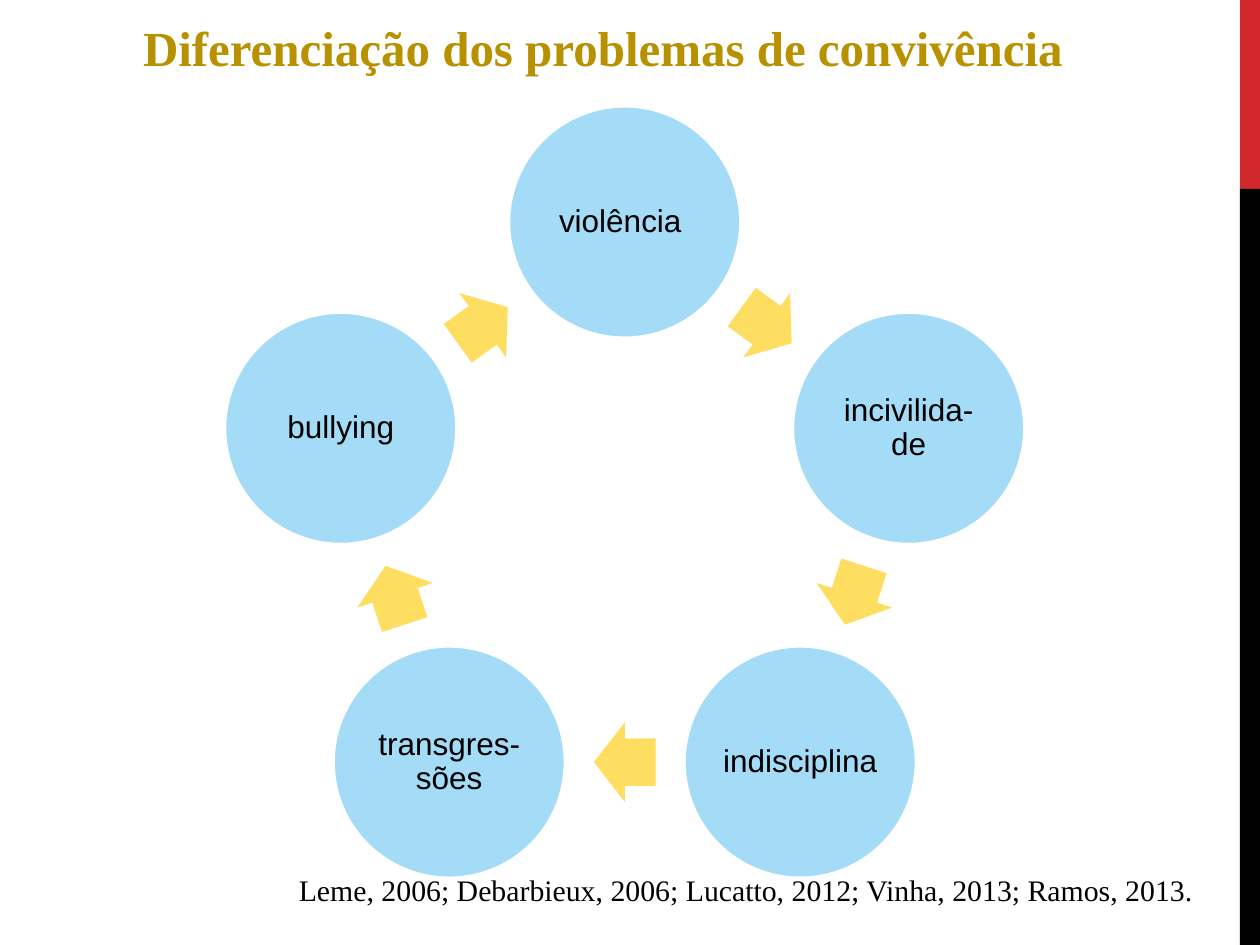
from math import cos, radians, sin

from pptx import Presentation
from pptx.dml.color import RGBColor
from pptx.enum.shapes import MSO_SHAPE
from pptx.enum.text import MSO_ANCHOR, PP_ALIGN
from pptx.util import Pt


def add_filled(kind, left, top, width, height, color):
    sp = s.shapes.add_shape(kind, Pt(left), Pt(top), Pt(width), Pt(height))
    sp.shadow.inherit = False
    sp.fill.solid()
    sp.fill.fore_color.rgb = RGBColor.from_string(color)
    sp.line.fill.background()
    return sp


def set_text(sp, text, font, size, color, align, bold=False):
    tf = sp.text_frame
    tf.word_wrap = True
    tf.vertical_anchor = MSO_ANCHOR.MIDDLE
    p = tf.paragraphs[0]
    p.text = text
    p.alignment = align
    p.line_spacing = 0.9
    p.font.name = font
    p.font.size = Pt(size)
    p.font.bold = bold
    p.font.color.rgb = RGBColor.from_string(color)
    return tf


prs = Presentation()
prs.slide_width, prs.slide_height = Pt(720), Pt(540)
s = prs.slides.add_slide(prs.slide_layouts[5])

add_filled(MSO_SHAPE.RECTANGLE, 708.5, 0, 11.5, 108, "D1282E")
add_filled(MSO_SHAPE.RECTANGLE, 708.5, 108, 11.5, 432, "000000")

title = s.shapes.title
title.left, title.top, title.width, title.height = Pt(0), Pt(9), Pt(689), Pt(40)
set_text(title, "Diferenciação dos problemas de convivência",
         "Times New Roman", 28, "B89101", PP_ALIGN.CENTER, bold=True)

labels = ["violência ", "incivilida-de", "indisciplina", "transgres-sões", "bullying"]
center_x, center_y = 357, 297.5
ring_radius, arrow_radius = 170.6, 138
diameter, arrow_w, arrow_h = 133, 35.3, 45.4
step = 360 / len(labels)

for i, label in enumerate(labels):
    angle = radians(i * step)
    x = center_x + ring_radius * sin(angle)
    y = center_y - ring_radius * cos(angle)
    circle = add_filled(MSO_SHAPE.OVAL, x - diameter / 2, y - diameter / 2,
                        diameter, diameter, "A4DBF6")
    circle.line.color.rgb = RGBColor.from_string("FFFFFF")
    circle.line.width = Pt(2.25)
    tf = set_text(circle, label, "Arial", 18, "000000", PP_ALIGN.CENTER)
    tf.margin_left = tf.margin_right = tf.margin_top = tf.margin_bottom = Pt(2)

    turn = (i + 0.5) * step
    x = center_x + arrow_radius * sin(radians(turn))
    y = center_y - arrow_radius * cos(radians(turn))
    arrow = add_filled(MSO_SHAPE.RIGHT_ARROW, x - arrow_w / 2, y - arrow_h / 2,
                       arrow_w, arrow_h, "FEDE61")
    arrow.adjustments[0], arrow.adjustments[1] = 0.6, 0.5
    arrow.rotation = turn

sources = s.shapes.add_textbox(Pt(120), Pt(497.5), Pt(569), Pt(24))
tf = set_text(sources, "Leme, 2006; Debarbieux, 2006; Lucatto, 2012; Vinha, 2013; Ramos, 2013.",
              "Times New Roman", 17, "000000", PP_ALIGN.RIGHT)
tf.margin_top = tf.margin_bottom = 0

prs.save("out.pptx")
